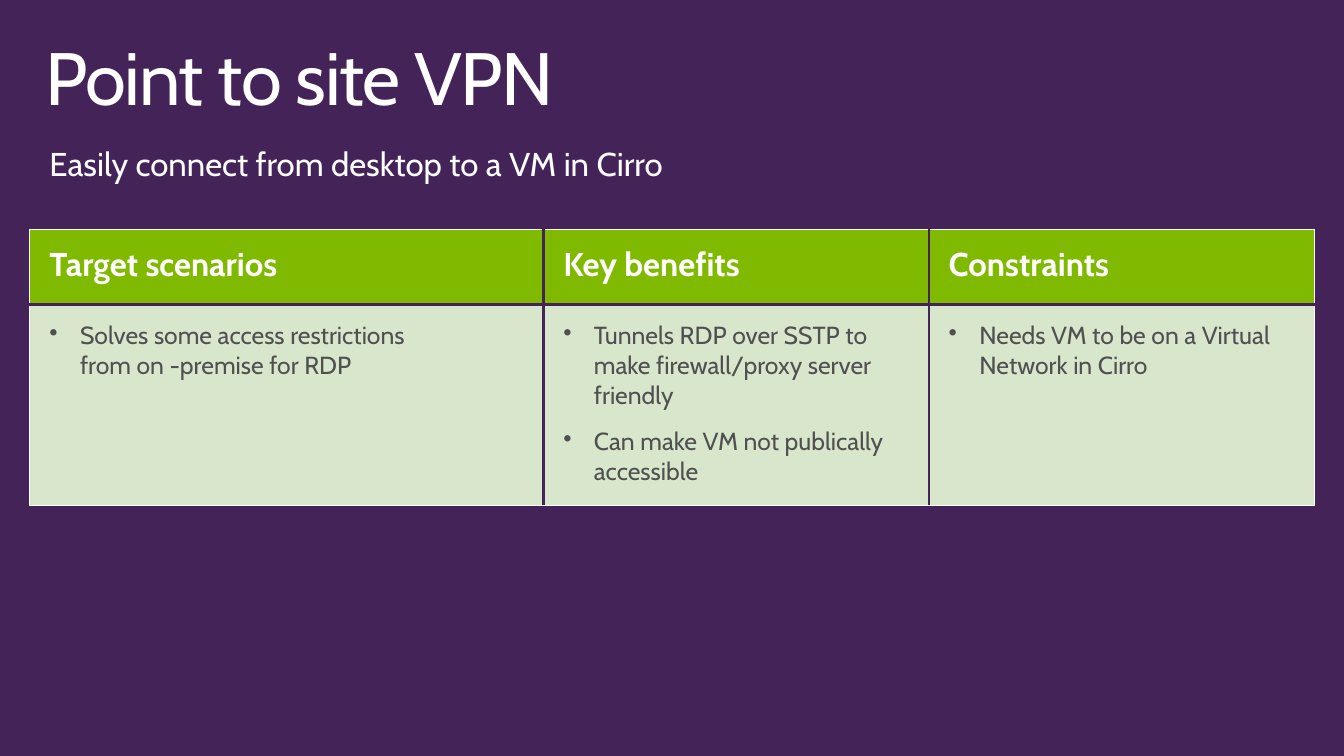
import pptx
import pptx.dml.color
import pptx.enum.text
import pptx.oxml
import pptx.oxml.ns
import pptx.util
from dataclasses import dataclass

Pt = pptx.util.Pt

TITLE = "Point to site VPN"
SUBTITLE = "Easily connect from desktop to a VM in Cirro"
COLUMNS = [
    ("Target scenarios", 374.4, ["Solves some access restrictions \nfrom on -premise for RDP"]),
    ("Key benefits", 280.8, [
        "Tunnels RDP over SSTP to make firewall/proxy server friendly",
        "Can make VM not publically accessible",
    ]),
    ("Constraints", 280.8, ["Needs VM to be on a Virtual Network in Cirro"]),
]


@dataclass(frozen=True)
class Theme:
    font: str = "Cabin"
    background: str = "442359"
    light: str = "FFFFFF"
    header: str = "7FBA00"
    body: str = "D8E7CC"
    body_text: str = "505050"
    title_size: float = 54
    heading_size: float = 24
    body_size: float = 18
    outer_line: float = 1
    inner_line: float = 2.25


THEME = Theme()
SLIDE_WIDTH, SLIDE_HEIGHT = 979.2, 550.8
LEFT, TABLE_TOP = 21.6, 167.04
ROW_HEIGHTS = (55, 146)
CELL_INSETS = (14.4, 11.52, 7.2, 14.4)
BULLET_INDENT = 22.3


def color(value):
    return pptx.dml.color.RGBColor.from_string(value)


def set_insets(target, insets):
    (target.margin_left, target.margin_top,
     target.margin_right, target.margin_bottom) = map(Pt, insets)


def add_text(para, text, size, ink, bold=False):
    for index, line in enumerate(text.split("\n")):
        if index:
            para.add_line_break()
        span = para.add_run()
        span.text = line
        span.font.name = THEME.font
        span.font.size = Pt(size)
        span.font.bold = bold
        span.font.color.rgb = color(ink)
    return span


def add_box(page, area, insets, text, size):
    box = page.shapes.add_textbox(*map(Pt, area))
    frame = box.text_frame
    frame.word_wrap = True
    frame.vertical_anchor = pptx.enum.text.MSO_ANCHOR.TOP
    set_insets(frame, insets)
    para = frame.paragraphs[0]
    para.line_spacing = 0.9
    return para, add_text(para, text, size, THEME.light)


def add_bullet(para):
    props = para._p.get_or_add_pPr()
    props.set("marL", str(Pt(BULLET_INDENT)))
    props.set("indent", str(-Pt(BULLET_INDENT)))
    bullet = pptx.oxml.parse_xml(
        f'<a:buChar {pptx.oxml.ns.nsdecls("a")} char="•"/>')
    props.append(bullet)
    para.line_spacing = 0.99
    para.space_after = Pt(12)


def set_borders(cell, row, column):
    outer_edges = {
        "L": column == 0,
        "R": column == len(COLUMNS) - 1,
        "T": row == 0,
        "B": row == len(ROW_HEIGHTS) - 1,
    }
    props = cell._tc.get_or_add_tcPr()
    for index, (side, outer) in enumerate(outer_edges.items()):
        ink = THEME.light if outer else THEME.background
        width = Pt(THEME.outer_line if outer else THEME.inner_line)
        props.insert(index, pptx.oxml.parse_xml(
            f'<a:ln{side} {pptx.oxml.ns.nsdecls("a")} w="{width}">'
            f'<a:solidFill><a:srgbClr val="{ink}"/></a:solidFill></a:ln{side}>'))


def style_cell(cell, row, column, fill):
    set_insets(cell, CELL_INSETS)
    cell.vertical_anchor = pptx.enum.text.MSO_ANCHOR.TOP
    cell.fill.solid()
    cell.fill.fore_color.rgb = color(fill)
    set_borders(cell, row, column)


def add_scenario_table(page):
    width = sum(column[1] for column in COLUMNS)
    area = (LEFT, TABLE_TOP, width, sum(ROW_HEIGHTS))
    table = page.shapes.add_table(len(ROW_HEIGHTS), len(COLUMNS), *map(Pt, area)).table
    table.horz_banding = False
    table.first_row = False
    for row, height in zip(table.rows, ROW_HEIGHTS):
        row.height = Pt(height)
    for index, (heading, column_width, points) in enumerate(COLUMNS):
        table.columns[index].width = Pt(column_width)
        header, body = table.cell(0, index), table.cell(1, index)
        style_cell(header, 0, index, THEME.header)
        style_cell(body, 1, index, THEME.body)
        add_text(header.text_frame.paragraphs[0], heading,
                 THEME.heading_size, THEME.light, bold=True)
        frame = body.text_frame
        for number, point in enumerate(points):
            para = frame.add_paragraph() if number else frame.paragraphs[0]
            add_bullet(para)
            add_text(para, point, THEME.body_size, THEME.body_text)


def main():
    deck = pptx.Presentation()
    deck.slide_width, deck.slide_height = Pt(SLIDE_WIDTH), Pt(SLIDE_HEIGHT)
    page = deck.slides.add_slide(deck.slide_layouts[6])
    page.background.fill.solid()
    page.background.fill.fore_color.rgb = color(THEME.background)

    para, span = add_box(page, (LEFT, 23.04, 936, 72), (11.52, 7.2, 11.52, 7.2),
                         TITLE, THEME.title_size)
    span.font._element.set("spc", "-100")
    add_scenario_table(page)
    para, span = add_box(page, (LEFT, 96.48, 884.16, 49.68), (14.4, 11.52, 14.4, 11.52),
                         SUBTITLE, THEME.heading_size)
    para.space_after = Pt(6)
    deck.save("out.pptx")


if __name__ == "__main__":
    main()
